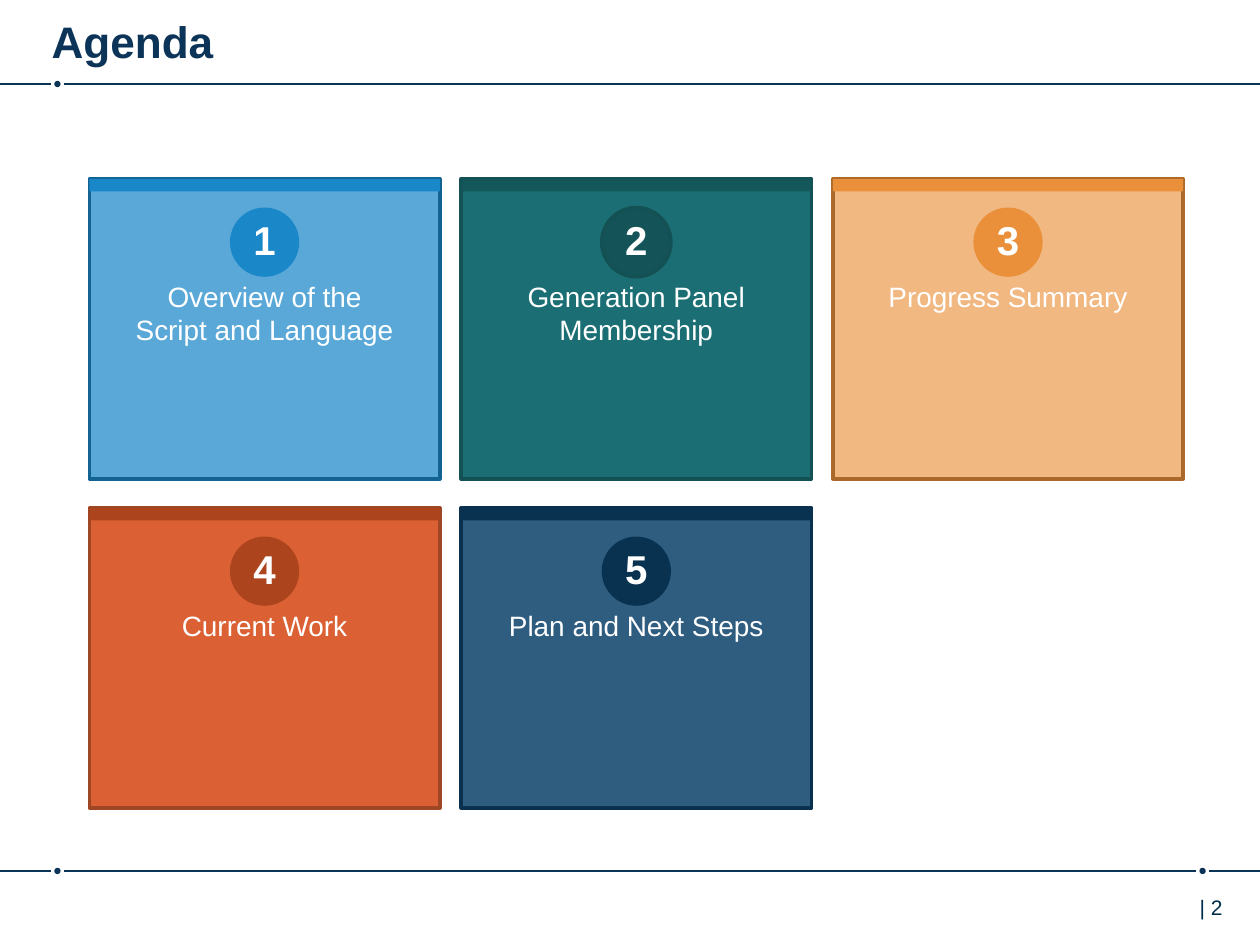
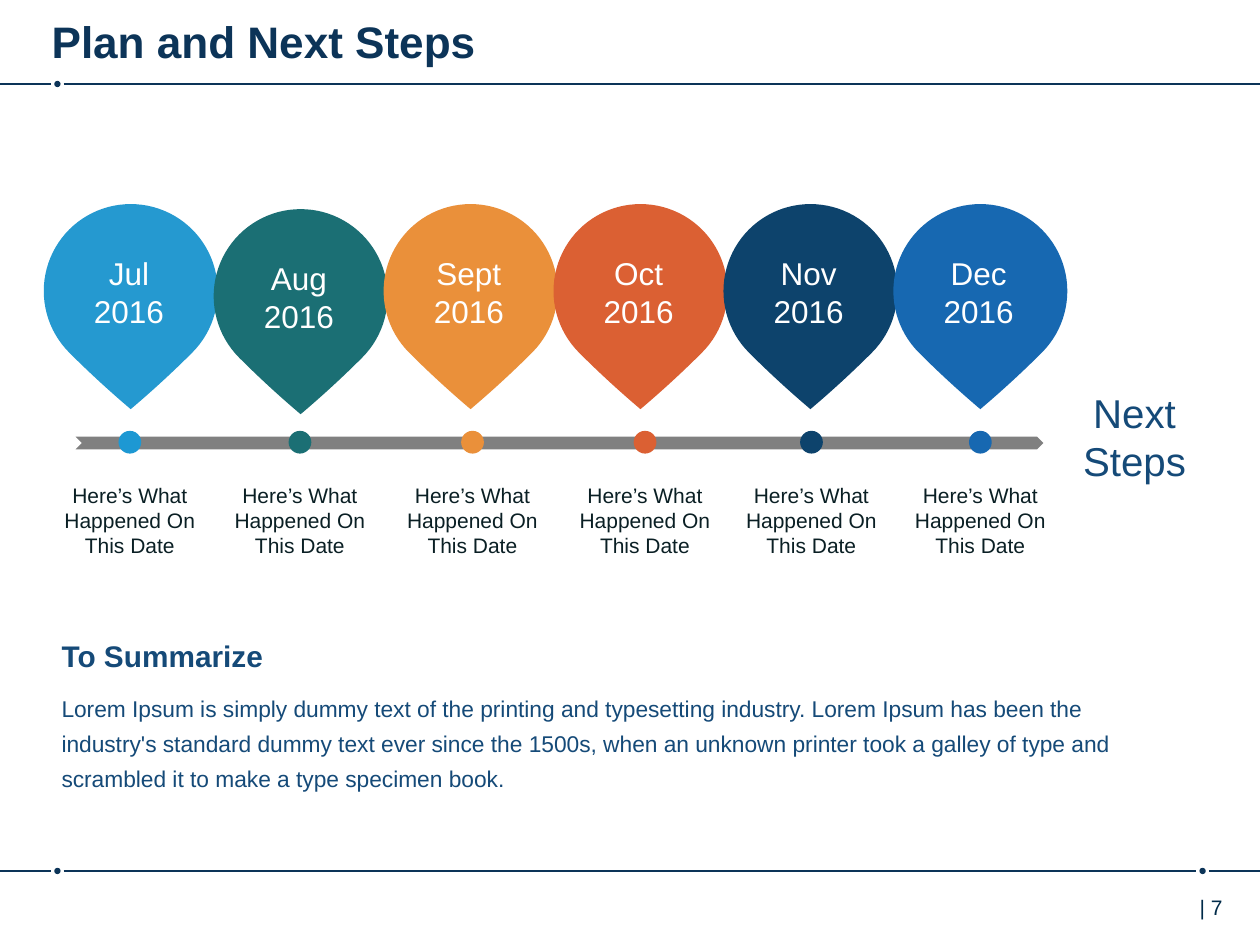
"""Build the agenda and the plan slides of a project update."""
from dataclasses import dataclass
from typing import Optional

from lxml.etree import SubElement
from pptx import Presentation
from pptx.dml.color import RGBColor
from pptx.enum.shapes import MSO_CONNECTOR as Connector, MSO_SHAPE as Shape
from pptx.enum.text import MSO_ANCHOR as Anchor, MSO_AUTO_SIZE as AutoSize, PP_ALIGN as Align
from pptx.oxml.ns import qn
from pptx.util import Pt

WIDTH, HEIGHT = 720, 540
FONT = "Arial"
COLORS = {
    "navy": "0C3458", "ink": "002B49", "body": "154A78", "caption": "0A1F24",
    "white": "FFFFFF", "grey": "808080",
    "blue": "1A87C9", "blue_edge": "126292",
    "teal": "1B6F74", "teal_dark": "145357", "teal_edge": "135154",
    "orange": "EA903A", "orange_edge": "AA692A",
    "red": "DB6033", "red_dark": "AC441E", "red_edge": "9F4625",
    "marine": "0D436C", "marine_dark": "093251", "marine_edge": "09304E",
    "sky": "2599D0", "sky_dot": "1D98D3", "royal": "1768B1",
}

RULE_GAP = 3.6
RULE_DOT = 3.6
LEFT_DOT, RIGHT_DOT = 32.8, 687.2

CARD_LEFT, CARD_TOP = 51.1, 102.2
CARD_WIDTH, CARD_HEIGHT = 200.2, 171.4
CARD_STEP_X, CARD_STEP_Y = 212.4, 188
CARD_COLUMNS = 3
BAND_HEIGHT = 7.2
BADGE_SIZE = 39.6
LABEL_WIDTH = 163.4

PIN_LEFT, PIN_STEP, PIN_SIZE = 25, 97.1, 99.4
PIN_TEXT_WIDTH = 93.6
DOT_SIZE = 13


@dataclass(frozen=True)
class Card:
    """An agenda topic with its colours."""
    label: str
    fill: str
    accent: str
    edge: str
    opacity: int = 100
    band_opacity: int = 100
    badge_edge: Optional[str] = None


@dataclass(frozen=True)
class Milestone:
    """A month on the timeline with its pin and dot."""
    month: str
    color: str
    dot_color: str
    dot_center: float
    pin_top: float = 116.6


CARDS = [
    Card("Overview of the Script and Language", "blue", "blue", "blue_edge", opacity=72),
    Card("Generation Panel Membership", "teal", "teal_dark", "teal_edge",
         band_opacity=80, badge_edge="teal_edge"),
    Card("Progress Summary", "orange", "orange", "orange_edge", opacity=63),
    Card("Current Work", "red", "red_dark", "red_edge"),
    Card("Plan and Next Steps", "marine", "marine_dark", "marine_edge", opacity=86),
]
MILESTONES = [
    Milestone("Jul", "sky", "sky_dot", 74.2),
    Milestone("Aug", "teal", "teal", 171.4, pin_top=119.5),
    Milestone("Sept", "orange", "orange", 270),
    Milestone("Oct", "red", "red", 368.6),
    Milestone("Nov", "marine", "marine", 463.7),
    Milestone("Dec", "royal", "royal", 560.2),
]
CAPTION = "Here’s What Happened On This Date"
SUMMARY = (
    "Lorem Ipsum is simply dummy text of the printing and typesetting industry. "
    "Lorem Ipsum has been the industry's standard dummy text ever since the 1500s, "
    "when an unknown printer took a galley of type and scrambled it to make a type "
    "specimen book."
)


def rgb(color: str) -> RGBColor:
    """Look up a named colour."""
    return RGBColor.from_string(COLORS[color])


def write_text(frame, text: str, *, size: float, color: str, bold: bool = False,
               align=Align.LEFT, leading: Optional[float] = None,
               insets: tuple = (7.2, 3.6, 7.2, 3.6)) -> None:
    """Fill a text frame, one paragraph for each line of the text."""
    frame.word_wrap = True
    frame.auto_size = AutoSize.NONE
    frame.vertical_anchor = Anchor.TOP
    frame.margin_left, frame.margin_top, frame.margin_right, frame.margin_bottom = map(Pt, insets)
    frame.text = text
    for paragraph in frame.paragraphs:
        paragraph.alignment = align
        if leading:
            paragraph.line_spacing = Pt(leading)
        font = paragraph.font
        font.name, font.size, font.bold = FONT, Pt(size), bold
        font.color.rgb = rgb(color)


def add_text(slide, left: float, top: float, width: float, height: float,
             text: str, **text_format) -> None:
    """Add a text box."""
    box = slide.shapes.add_textbox(Pt(left), Pt(top), Pt(width), Pt(height))
    write_text(box.text_frame, text, **text_format)


def add_block(slide, kind, left: float, top: float, width: float, height: float, fill: str,
              edge: Optional[str] = None, opacity: int = 100):
    """Add a flat preset shape, with an outline only if an edge colour is given."""
    block = slide.shapes.add_shape(kind, Pt(left), Pt(top), Pt(width), Pt(height))
    block.shadow.inherit = False
    block.fill.solid()
    block.fill.fore_color.rgb = rgb(fill)
    if opacity < 100:
        tint = block._element.spPr.find(qn("a:solidFill"))[0]
        SubElement(tint, qn("a:alpha"), val=str(opacity * 1000))
    if edge:
        block.line.color.rgb = rgb(edge)
        block.line.width = Pt(2)
    else:
        block.line.fill.background()
    return block


def add_rule(slide, y: float, dots: list[float]) -> None:
    """Draw a full-width line that is broken around each dot."""
    gaps = [x for dot in dots for x in (dot - RULE_GAP, dot + RULE_GAP)]
    stops = [0, *gaps, WIDTH]
    for start, end in zip(stops[::2], stops[1::2]):
        segment = slide.shapes.add_connector(Connector.STRAIGHT, Pt(start), Pt(y), Pt(end), Pt(y))
        segment.line.color.rgb = rgb("navy")
        segment.line.width = Pt(1)
        SubElement(segment._element.spPr, qn("a:effectLst"))
    for dot in dots:
        add_block(slide, Shape.OVAL, dot - RULE_DOT / 2, y - RULE_DOT / 2,
                  RULE_DOT, RULE_DOT, "navy")


def add_framed_slide(deck, heading: str, page: int):
    """Add a slide with its title, two rules and page number."""
    slide = deck.slides.add_slide(deck.slide_layouts[5])
    add_rule(slide, 48, [LEFT_DOT])
    add_rule(slide, 497.7, [LEFT_DOT, RIGHT_DOT])
    add_text(slide, 685.5, 507.6, 34, 28.8, f"| {page}", size=12, color="ink",
             insets=(0, 3.6, 0, 3.6))
    title = slide.shapes.title
    title.left, title.top, title.width, title.height = Pt(29.5), Pt(3.6), Pt(630.7), Pt(35.3)
    write_text(title.text_frame, heading, size=25.2, color="navy", bold=True,
               insets=(0, 4.4, 0, 3.6))
    return slide


def draw_card(slide, index: int, card: Card) -> None:
    """Draw one numbered agenda card in its grid cell."""
    row, column = divmod(index, CARD_COLUMNS)
    left = CARD_LEFT + column * CARD_STEP_X
    top = CARD_TOP + row * CARD_STEP_Y
    center = left + CARD_WIDTH / 2
    add_block(slide, Shape.RECTANGLE, left, top, CARD_WIDTH, CARD_HEIGHT, card.fill,
              card.edge, card.opacity)
    add_block(slide, Shape.RECTANGLE, left, top, CARD_WIDTH, BAND_HEIGHT, card.accent,
              opacity=card.band_opacity)
    add_block(slide, Shape.OVAL, center - BADGE_SIZE / 2, top + 16.4, BADGE_SIZE, BADGE_SIZE,
              card.accent, card.badge_edge)
    add_text(slide, left, top + 17.5, CARD_WIDTH, 35.3, str(index + 1), size=23,
             color="white", bold=True, align=Align.CENTER)
    add_text(slide, center - LABEL_WIDTH / 2, top + 53.7, LABEL_WIDTH, 85, card.label,
             size=16, color="white", align=Align.CENTER)


def draw_milestone(slide, index: int, milestone: Milestone) -> None:
    """Draw one pin with its month, its dot and its caption."""
    left, top = PIN_LEFT + index * PIN_STEP, milestone.pin_top
    pin = add_block(slide, Shape.TEAR, left, top, PIN_SIZE, PIN_SIZE, milestone.color)
    pin.rotation = 135
    pin.adjustments[0] = 0.96
    add_text(slide, left + 1.9, top + 25.2, PIN_TEXT_WIDTH, 51.1, f"{milestone.month}\n2016",
             size=18, color="white", align=Align.CENTER)
    add_block(slide, Shape.OVAL, milestone.dot_center - DOT_SIZE / 2, 246.2,
              DOT_SIZE, DOT_SIZE, milestone.dot_color)
    add_text(slide, milestone.dot_center - PIN_TEXT_WIDTH / 2, 272.2, PIN_TEXT_WIDTH, 51.1,
             CAPTION, size=12, color="caption", align=Align.CENTER)


def build_agenda(deck) -> None:
    """Build the slide with the grid of topics."""
    slide = add_framed_slide(deck, "Agenda", 2)
    for index, card in enumerate(CARDS):
        draw_card(slide, index, card)


def build_plan(deck) -> None:
    """Build the slide with the timeline and the summary."""
    slide = add_framed_slide(deck, "Plan and Next Steps", 7)
    add_block(slide, Shape.CHEVRON, 43.2, 249.6, 553, 7.2, "grey")
    for index, milestone in enumerate(MILESTONES):
        draw_milestone(slide, index, milestone)
    add_text(slide, 597.6, 218.2, 101.5, 65.5, "Next\nSteps", size=23, color="body",
             align=Align.CENTER)
    add_text(slide, 28.1, 361.4, 565.2, 27.4, "To Summarize", size=17, color="body",
             bold=True, leading=19.8)
    add_text(slide, 28.1, 389.5, 637.9, 67.7, SUMMARY, size=13, color="body", leading=19.8)


def main() -> None:
    """Build and save the deck."""
    deck = Presentation()
    deck.slide_width, deck.slide_height = Pt(WIDTH), Pt(HEIGHT)
    build_agenda(deck)
    build_plan(deck)
    deck.save("out.pptx")


if __name__ == "__main__":
    main()
